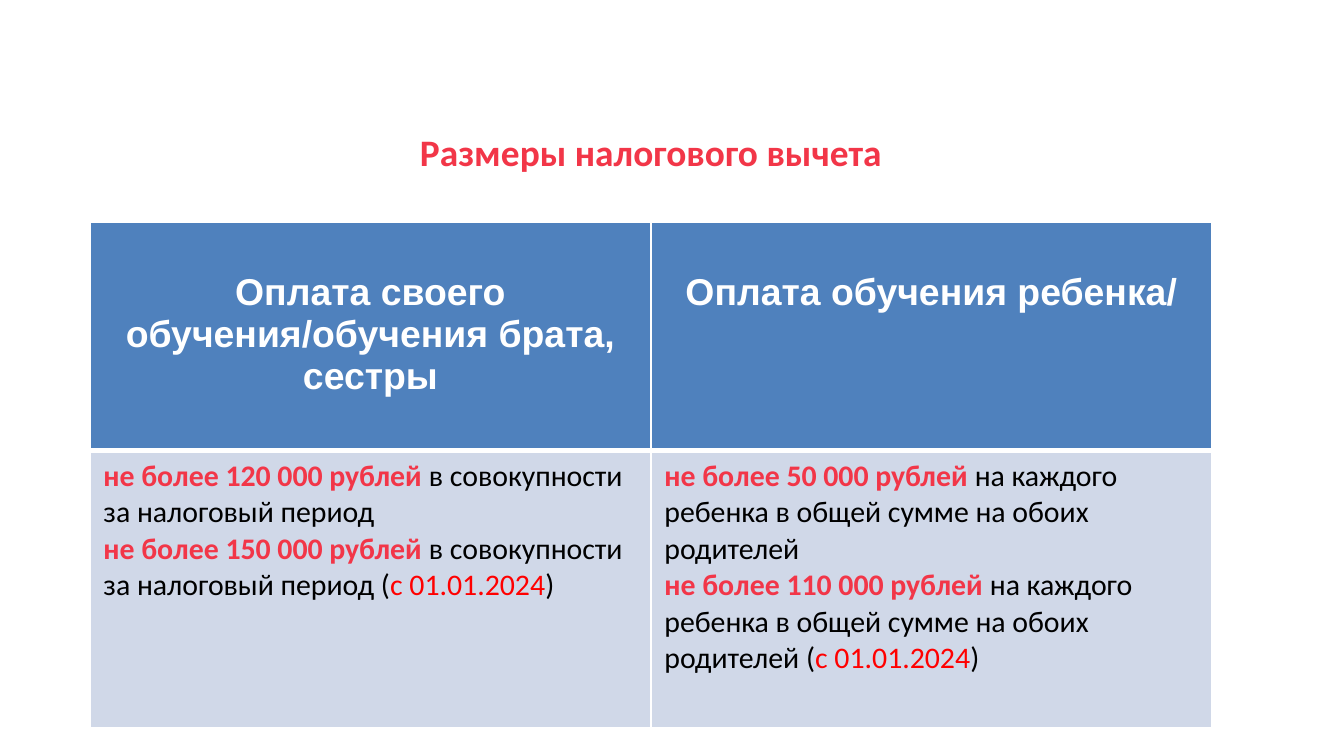
from lxml.etree import SubElement
from pptx import Presentation
from pptx.dml.color import RGBColor
from pptx.enum.text import MSO_ANCHOR, PP_ALIGN
from pptx.oxml.ns import qn
from pptx.util import Emu, Pt

COLORS = {"accent": "F23648", "date": "FF0000", "text": "000000",
          "white": "FFFFFF", "header": "4F81BD", "body": "D0D8E8"}


def px(length):
    return Emu(round(length * 914400 / 134.4))


def add_span(para, text, color, size, bold=False, font="Calibri"):
    span = para.add_run()
    span.text = text
    span.font.name = font
    span.font.size = Pt(size)
    span.font.bold = bold
    span.font.color.rgb = RGBColor.from_string(COLORS[color])


deck = Presentation()
deck.slide_width, deck.slide_height = px(1344), px(756)
page = deck.slides.add_slide(deck.slide_layouts[5])

# Table: header and body row, two equal columns
table = page.shapes.add_table(2, 2, px(90), px(222), px(1122), px(506)).table
table.horz_banding = False
table.rows[0].height, table.rows[1].height = px(229), px(277)

# Cell borders and fills; the line below the header is thicker
for row, fill in enumerate(("header", "body")):
    for column in range(2):
        cell = table.cell(row, column)
        widths = {"L": 1, "R": 1, "T": 3 if row else 1, "B": 1 if row else 3}
        for side, width in widths.items():
            line = SubElement(cell._tc.get_or_add_tcPr(), qn("a:ln" + side), w=str(Pt(width)))
            SubElement(SubElement(line, qn("a:solidFill")), qn("a:srgbClr"), val=COLORS["white"])
        cell.fill.solid()
        cell.fill.fore_color.rgb = RGBColor.from_string(COLORS[fill])

# Header texts
headings = ["Оплата своего обучения/обучения брата, сестры", "Оплата обучения ребенка/"]
for column, heading in enumerate(headings):
    cell = table.cell(0, column)
    cell.margin_top = px(50)
    para = cell.text_frame.paragraphs[0]
    para.alignment = PP_ALIGN.CENTER
    add_span(para, heading, "white", 20, True, "Arial")

# Body texts: one list of (text, color) runs per paragraph
since = [("с 01.01.2024", "date"), (")", "text")]
per_child = "на каждого ребенка в общей сумме на обоих родителей"
limits = [
    [[("не более 120 000 рублей ", "accent"), ("в совокупности", "text")],
     [("за налоговый период", "text")],
     [("не более 150 000 рублей ", "accent"), ("в совокупности", "text")],
     [("за налоговый период (", "text"), *since]],
    [[("не более 50 000 рублей ", "accent"), (per_child, "text")],
     [("не более 110 000 рублей ", "accent"), (per_child + " (", "text"), *since]],
]
for column, paragraphs in enumerate(limits):
    frame = table.cell(1, column).text_frame
    for index, spans in enumerate(paragraphs):
        para = frame.add_paragraph() if index else frame.paragraphs[0]
        for text, color in spans:
            add_span(para, text, color, 16, color == "accent")

# Title
title = page.shapes.title
title.left, title.top, title.width, title.height = px(90), px(82), px(1122), px(139)
title.text_frame.vertical_anchor = MSO_ANCHOR.MIDDLE
para = title.text_frame.paragraphs[0]
para.alignment = PP_ALIGN.CENTER
add_span(para, "Размеры налогового вычета", "accent", 20, True)

deck.save("out.pptx")
